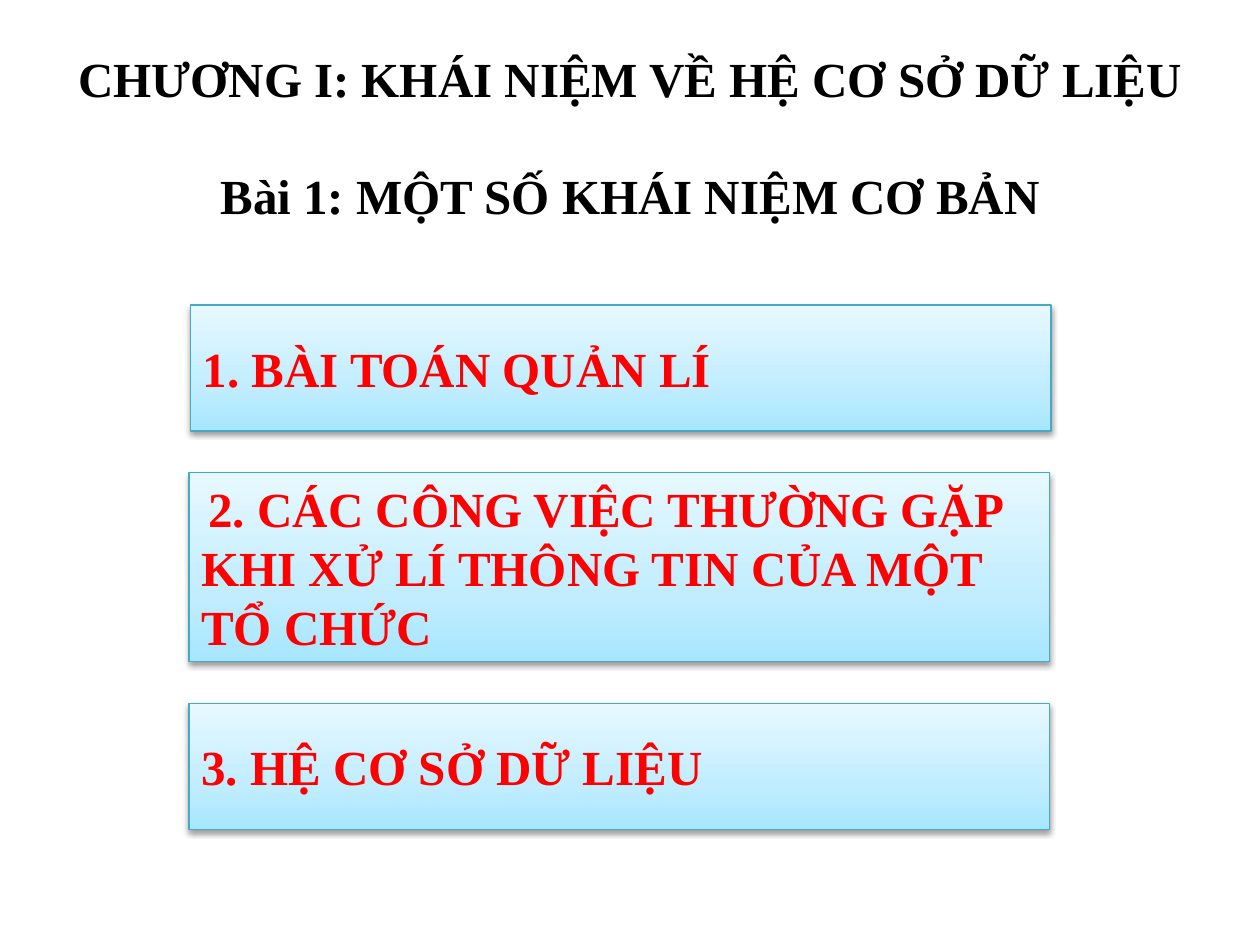
from copy import deepcopy
from dataclasses import dataclass
from lxml import etree
from pptx import Presentation, util as u
from pptx.dml.color import RGBColor as Rgb
from pptx.enum import shapes, text
from pptx.oxml.ns import qn


@dataclass(frozen=True)
class Theme:
    face: str = "Times New Roman"
    body: str = "Calibri"
    ink: str = "000000"
    red: str = "FF0000"
    edge: str = "46AAC5"
    fade: tuple = ((0, "A7E6FF"), (0.35, "C1EDFF"), (1, "E7F8FF"))
    size: int = 28
    small: int = 18


theme = Theme()


def style(run, color, face=theme.face, size=theme.size, bold=True):
    run.font.name = face
    run.font.size = u.Pt(size)
    run.font.bold = bold
    run.font.color.rgb = Rgb.from_string(color)


def shade(shape):
    shape.shadow.inherit = False
    glow = shape._element.spPr.find(qn("a:effectLst"))
    drop = etree.SubElement(glow, qn("a:outerShdw"), blurRad="40000",
                            dist="20000", dir="5400000", rotWithShape="0")
    tone = etree.SubElement(drop, qn("a:srgbClr"), val=theme.ink)
    etree.SubElement(tone, qn("a:alpha"), val="38000")


deck = Presentation()
deck.slide_width, deck.slide_height = u.Cm(25.4), u.Cm(19.05)
slide = deck.slides.add_slide(deck.slide_layouts[5])

title = slide.shapes.title
title.left, title.top = u.Cm(1.27), u.Cm(0.76)
title.width, title.height = u.Cm(22.86), u.Cm(5.16)
frame = title.text_frame
frame.text = ("CHƯƠNG I: KHÁI NIỆM VỀ HỆ CƠ SỞ DỮ LIỆU\v\v"
              "Bài 1: MỘT SỐ KHÁI NIỆM CƠ BẢN\v")
frame.auto_size = text.MSO_AUTO_SIZE.NONE
frame.vertical_anchor = text.MSO_ANCHOR.MIDDLE
para = frame.paragraphs[0]
para.alignment = text.PP_ALIGN.CENTER
for run in para.runs:
    style(run, theme.ink)
look = para.runs[0]._r.rPr
for gap in para._p.findall(qn("a:br")):
    gap.insert(0, deepcopy(look))
tail = etree.SubElement(para._p, qn("a:endParaRPr"), dict(look.attrib))
tail.extend(deepcopy(list(look)))

items = (
    (3.84, 6.15, 2.54, "", "1. BÀI TOÁN QUẢN LÍ"),
    (3.81, 9.53, 3.81, " ",
     "2. CÁC CÔNG VIỆC THƯỜNG GẶP KHI XỬ LÍ THÔNG TIN CỦA MỘT TỔ CHỨC"),
    (3.81, 14.18, 2.54, "", "3. HỆ CƠ SỞ DỮ LIỆU"),
)
for left, top, high, lead, words in items:
    box = slide.shapes.add_shape(shapes.MSO_SHAPE.RECTANGLE, u.Cm(left),
                                 u.Cm(top), u.Cm(17.35), u.Cm(high))
    box.fill.gradient()
    box.fill.gradient_angle = 90
    stops = box._element.spPr.find(qn("a:gradFill")).find(qn("a:gsLst"))
    stops.append(deepcopy(stops[-1]))
    for stop, (place, color) in zip(box.fill.gradient_stops, theme.fade):
        stop.position = place
        stop.color.rgb = Rgb.from_string(color)
    box.line.color.rgb = Rgb.from_string(theme.edge)
    box.line.width = u.Pt(0.75)
    shade(box)
    frame = box.text_frame
    frame.word_wrap = True
    frame.vertical_anchor = text.MSO_ANCHOR.MIDDLE
    para = frame.paragraphs[0]
    para.alignment = text.PP_ALIGN.LEFT
    if lead:
        para.text = lead
        style(para.runs[0], theme.ink, theme.body, theme.small, False)
    run = para.add_run()
    run.text = words
    style(run, theme.red)

deck.save("out.pptx")
